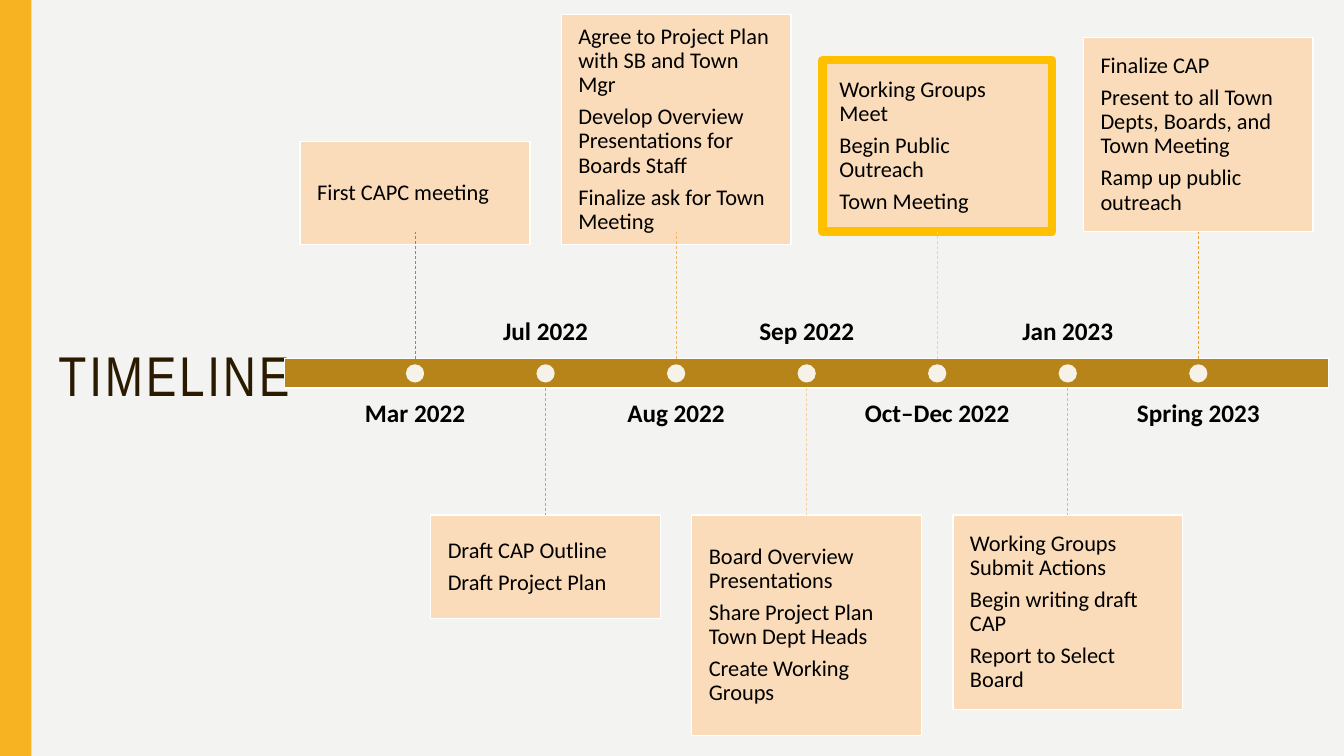
import pptx
import pptx.dml.color
import pptx.enum.dml
import pptx.enum.shapes
import pptx.enum.text
import pptx.oxml
import pptx.oxml.ns
import pptx.util
from pptx.dml.color import RGBColor
from pptx.util import Cm

PAPER = RGBColor(0xF3, 0xF3, 0xF2)
STRIP = RGBColor(0xF8, 0xB3, 0x23)
TITLE = RGBColor(0x2A, 0x1A, 0x00)
GOLD = RGBColor(0xB7, 0x84, 0x1A)
AMBER = RGBColor(0xE6, 0xA2, 0x2C)
APRICOT = RGBColor(0xF0, 0xB6, 0x63)
SAND = RGBColor(0xF7, 0xCE, 0x9C)
PEACH = RGBColor(0xFB, 0xDA, 0xB5)
HIGHLIGHT = RGBColor(0xFF, 0xC0, 0x00)
WHITE = RGBColor(0xFF, 0xFF, 0xFF)
BLACK = RGBColor(0x00, 0x00, 0x00)

FIRST_X, STEP = 10.46, 3.29
BAR_TOP, BAR_BOTTOM = 9.04, 9.78
UPPER_END, LOWER_END = 5.84, 12.98
CARD_WIDTH, LABEL_WIDTH, LABEL_HEIGHT, DOT = 5.79, 5.26, 2.11, 0.46

MILESTONES = [
    ("Mar 2022", 3.56, 2.61, GOLD, ["First CAPC meeting"]),
    ("Jul 2022", LOWER_END, 2.61, AMBER,
     ["Draft CAP Outline", "Draft Project Plan"]),
    ("Aug 2022", 0.36, 5.81, APRICOT,
     ["Agree to Project Plan with SB and Town Mgr",
      "Develop Overview Presentations for Boards Staff",
      "Finalize ask for Town Meeting"]),
    ("Sep 2022", LOWER_END, 5.56, SAND,
     ["Board Overview Presentations",
      "Share Project Plan Town Dept Heads",
      "Create Working Groups"]),
    ("Oct–Dec 2022", 1.52, 4.32, SAND,
     ["Working Groups Meet", "Begin Public Outreach", "Town Meeting"]),
    ("Jan 2023", LOWER_END, 4.9, APRICOT,
     ["Working Groups Submit Actions", "Begin writing draft CAP",
      "Report to Select Board"]),
    ("Spring 2023", 0.94, 4.9, AMBER,
     ["Finalize CAP", "Present to all Town Depts, Boards, and Town Meeting",
      "Ramp up public outreach"]),
]
CURRENT = "Oct–Dec 2022"


def add_block(slide, preset, left, top, width, height, fill, line=None, weight=1, alpha=None):
    block = slide.shapes.add_shape(preset, Cm(left), Cm(top), Cm(width), Cm(height))
    block.shadow.inherit = False
    block.fill.solid()
    block.fill.fore_color.rgb = fill
    if alpha:
        color = block.fill._xPr.find(".//" + pptx.oxml.ns.qn("a:srgbClr"))
        opacity = pptx.oxml.parse_xml(
            f'<a:alpha {pptx.oxml.ns.nsdecls("a")} val="{alpha * 1000}"/>')
        color.append(opacity)
    if line is None:
        block.line.fill.background()
    else:
        block.line.color.rgb = line
        block.line.width = pptx.util.Pt(weight)
    return block


def write_lines(frame, lines, size, align, anchor, inset, bold=False):
    frame.word_wrap = True
    frame.vertical_anchor = anchor
    frame.margin_left = frame.margin_right = Cm(inset)
    frame.margin_top = frame.margin_bottom = Cm(inset)
    frame.text = "\n".join(lines)
    for paragraph in frame.paragraphs:
        paragraph.alignment = align
        paragraph.line_spacing = 0.9
        paragraph.space_after = pptx.util.Pt(size * 0.35)
        paragraph.font.name = "Calibri"
        paragraph.font.size = pptx.util.Pt(size)
        paragraph.font.bold = bold
        paragraph.font.color.rgb = BLACK


def add_title(slide):
    title = slide.shapes.title
    title.left, title.top, title.width, title.height = Cm(1.22), Cm(2.01), Cm(9.4), Cm(15.06)
    title.text_frame.text = "TIMELINE"
    title.text_frame.vertical_anchor = pptx.enum.text.MSO_ANCHOR.MIDDLE
    heading = title.text_frame.paragraphs[0]
    heading.alignment = pptx.enum.text.PP_ALIGN.LEFT
    heading.line_spacing = 0.9
    heading.font.name = "Arial Narrow"
    heading.font.size = pptx.util.Pt(40)
    heading.font.color.rgb = TITLE
    heading.runs[0].font._element.set("spc", "200")


def add_card(slide, x, top, height, tasks, current):
    border, weight = (HIGHLIGHT, 6) if current else (WHITE, 1)
    card = add_block(slide, pptx.enum.shapes.MSO_SHAPE.RECTANGLE, x - CARD_WIDTH / 2, top,
                     CARD_WIDTH, height, PEACH, border, weight, alpha=90)
    write_lines(card.text_frame, tasks, 16, pptx.enum.text.PP_ALIGN.LEFT,
                pptx.enum.text.MSO_ANCHOR.MIDDLE, 0.43)
    return card


def add_stem(slide, x, start, end, color, card, side):
    stem = slide.shapes.add_connector(pptx.enum.shapes.MSO_CONNECTOR.STRAIGHT,
                                      Cm(x), Cm(start), Cm(x), Cm(end))
    stem.line.color.rgb = color
    stem.line.width = pptx.util.Pt(0.5)
    stem.line.dash_style = pptx.enum.dml.MSO_LINE.DASH
    stem._element.spPr.append(
        pptx.oxml.parse_xml(f'<a:effectLst {pptx.oxml.ns.nsdecls("a")}/>'))
    if Cm(end) in (card.top, card.top + card.height):
        stem.end_connect(card, side)


def add_label(slide, x, top, date, anchor):
    label = slide.shapes.add_textbox(Cm(x - LABEL_WIDTH / 2), Cm(top),
                                     Cm(LABEL_WIDTH), Cm(LABEL_HEIGHT))
    write_lines(label.text_frame, [date], 18, pptx.enum.text.PP_ALIGN.CENTER,
                anchor, 0, bold=True)


def add_milestone(slide, x, date, top, height, color, tasks):
    card = add_card(slide, x, top, height, tasks, date == CURRENT)
    if top < BAR_TOP:
        add_stem(slide, x, BAR_TOP, UPPER_END, color, card, 2)
        add_label(slide, x, 10.11, date, pptx.enum.text.MSO_ANCHOR.TOP)
    else:
        add_stem(slide, x, BAR_BOTTOM, LOWER_END, color, card, 0)
        add_label(slide, x, 6.6, date, pptx.enum.text.MSO_ANCHOR.BOTTOM)
    add_block(slide, pptx.enum.shapes.MSO_SHAPE.OVAL, x - DOT / 2,
              (BAR_TOP + BAR_BOTTOM - DOT) / 2, DOT, DOT, WHITE, alpha=90)


def main():
    deck = pptx.Presentation()
    deck.slide_width, deck.slide_height = Cm(33.87), Cm(19.05)
    slide = deck.slides.add_slide(deck.slide_layouts[5])
    slide.background.fill.solid()
    slide.background.fill.fore_color.rgb = PAPER
    rectangle = pptx.enum.shapes.MSO_SHAPE.RECTANGLE
    add_block(slide, rectangle, 0, 0, 0.79, 19.05, STRIP)
    add_title(slide)
    add_block(slide, rectangle, 7.17, BAR_TOP, 26.31, BAR_BOTTOM - BAR_TOP, GOLD, WHITE)
    for index, milestone in enumerate(MILESTONES):
        add_milestone(slide, FIRST_X + index * STEP, *milestone)
    deck.save("out.pptx")


if __name__ == "__main__":
    main()
